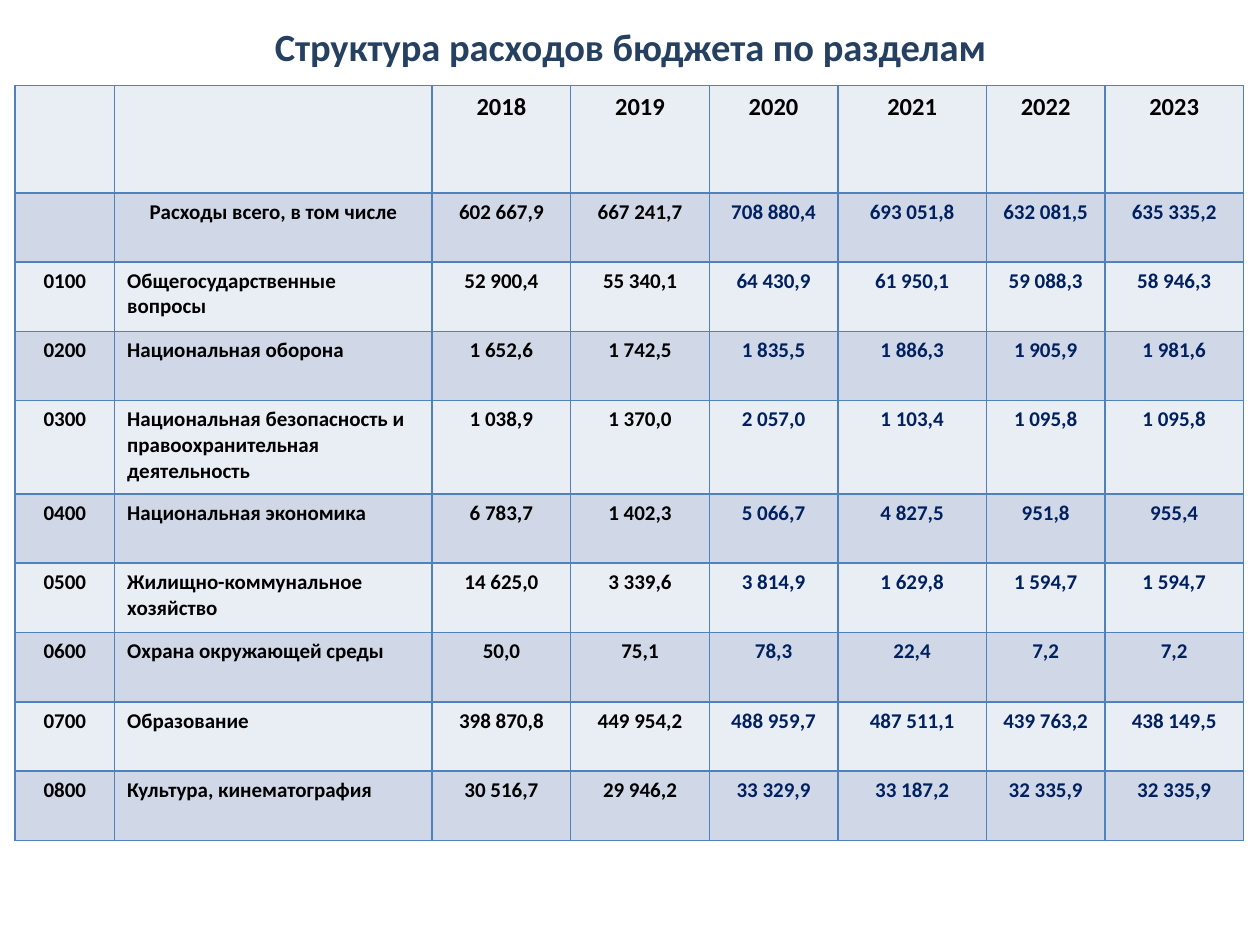
"""Build the slide with the table of budget expenditure by section."""
from lxml import etree
from pptx import Presentation
from pptx.dml.color import RGBColor
from pptx.enum import text
from pptx.oxml import ns
from pptx.util import Inches, Pt

COLORS = {
    "title": "254061",
    "actual": "000000",
    "plan": "002060",
    "light": "E9EDF4",
    "dark": "D0D8E8",
    "border": "4F81BD",
}
COLUMN_WIDTHS = [0.79, 2.52, 1.1, 1.1, 1.02, 1.18, 0.94, 1.1]
ROW_HEIGHTS = [0.85, 0.55, 0.55, 0.55, 0.74, 0.55, 0.55, 0.55, 0.55, 0.55]
FIRST_PLAN_COLUMN = 4
ROWS = [
    ["", "", "2018", "2019", "2020", "2021", "2022", "2023"],
    ["", "Расходы всего, в том числе", "602 667,9", "667 241,7", "708 880,4", "693 051,8", "632 081,5", "635 335,2"],
    ["0100", "Общегосударственные вопросы", "52 900,4", "55 340,1", "64 430,9", "61 950,1", "59 088,3", "58 946,3"],
    ["0200", "Национальная оборона", "1 652,6", "1 742,5", "1 835,5", "1 886,3", "1 905,9", "1 981,6"],
    ["0300", "Национальная безопасность и правоохранительная деятельность",
     "1 038,9", "1 370,0", "2 057,0", "1 103,4", "1 095,8", "1 095,8"],
    ["0400", "Национальная экономика", "6 783,7", "1 402,3", "5 066,7", "4 827,5", "951,8", "955,4"],
    ["0500", "Жилищно-коммунальное хозяйство", "14 625,0", "3 339,6", "3 814,9", "1 629,8", "1 594,7", "1 594,7"],
    ["0600", "Охрана окружающей среды", "50,0", "75,1", "78,3", "22,4", "7,2", "7,2"],
    ["0700", "Образование", "398 870,8", "449 954,2", "488 959,7", "487 511,1", "439 763,2", "438 149,5"],
    ["0800", "Культура, кинематография", "30 516,7", "29 946,2", "33 329,9", "33 187,2", "32 335,9", "32 335,9"],
]


def write(frame, words, size, color, centered=True):
    frame.text = words
    para = frame.paragraphs[0]
    para.alignment = text.PP_ALIGN.CENTER if centered else text.PP_ALIGN.LEFT
    for span in para.runs:
        span.font.name = "Calibri"
        span.font.size = Pt(size)
        span.font.bold = True
        span.font.color.rgb = RGBColor.from_string(COLORS[color])


def add_borders(cell):
    properties = cell._tc.get_or_add_tcPr()
    for side in ("a:lnL", "a:lnR", "a:lnT", "a:lnB"):
        line = etree.SubElement(properties, ns.qn(side), w=str(Pt(1)))
        fill = etree.SubElement(line, ns.qn("a:solidFill"))
        etree.SubElement(fill, ns.qn("a:srgbClr"), val=COLORS["border"])


deck = Presentation()
deck.slide_width, deck.slide_height = Inches(10), Inches(7.5)
page = deck.slides.add_slide(deck.slide_layouts[6])

table = page.shapes.add_table(
    len(ROWS), len(COLUMN_WIDTHS), Inches(0.12), Inches(0.68),
    Inches(sum(COLUMN_WIDTHS)), Inches(sum(ROW_HEIGHTS)),
).table
for column, width in zip(table.columns, COLUMN_WIDTHS):
    column.width = Inches(width)
for row, height in zip(table.rows, ROW_HEIGHTS):
    row.height = Inches(height)

for row_index, values in enumerate(ROWS):
    for column_index, value in enumerate(values):
        cell = table.cell(row_index, column_index)
        add_borders(cell)
        cell.fill.solid()
        cell.fill.fore_color.rgb = RGBColor.from_string(COLORS["dark" if row_index % 2 else "light"])
        is_plan = row_index > 0 and column_index >= FIRST_PLAN_COLUMN
        is_section_name = row_index > 1 and column_index == 1
        write(cell.text_frame, value, 12 if row_index else 14,
              "plan" if is_plan else "actual", not is_section_name)

title_box = page.shapes.add_textbox(Inches(0.12), Inches(0.13), Inches(9.77), Inches(0.47))
title_box.text_frame.word_wrap = True
title_box.text_frame.auto_size = text.MSO_AUTO_SIZE.SHAPE_TO_FIT_TEXT
write(title_box.text_frame, "Структура расходов бюджета по разделам", 22, "title")

deck.save("out.pptx")
